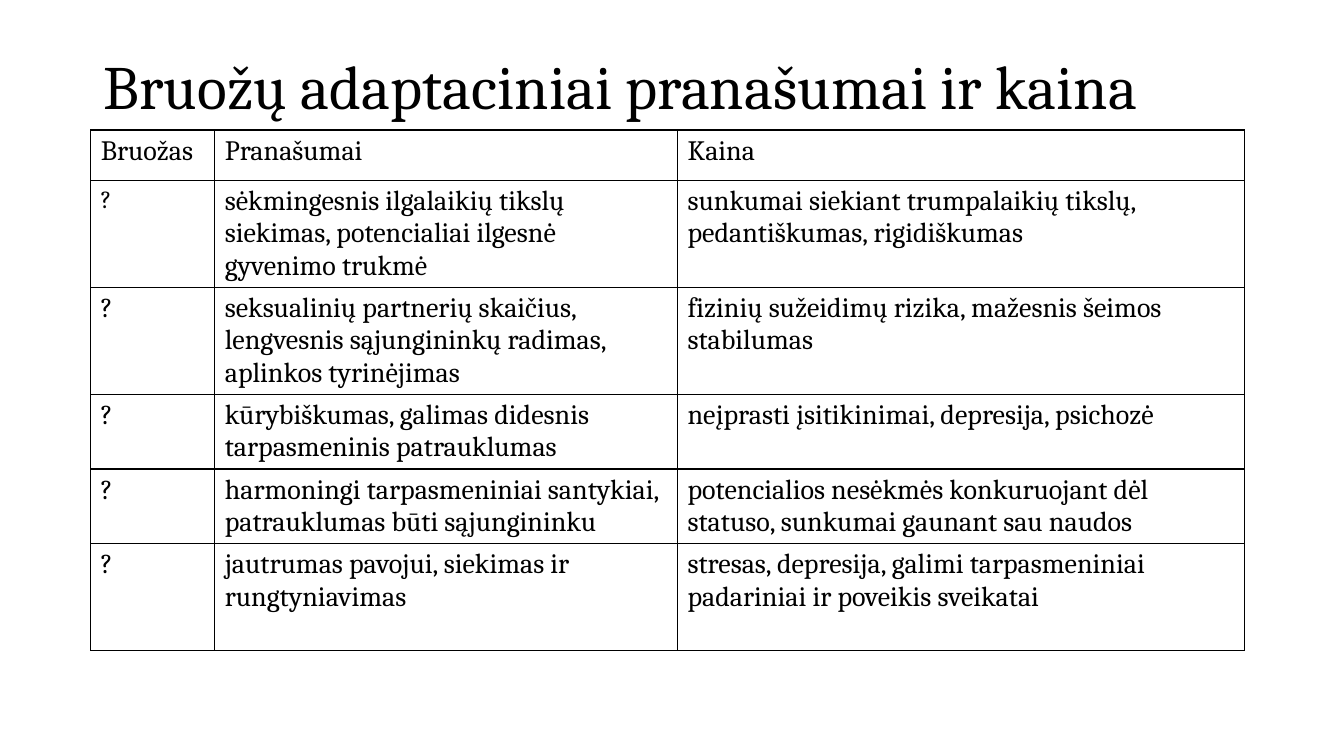
import pptx
import pptx.util
import pptx.dml.color
import pptx.enum.text
import pptx.oxml.ns
from lxml import etree

Inches, Pt = pptx.util.Inches, pptx.util.Pt
qn = pptx.oxml.ns.qn

# Content
TITLE = "Bruožų adaptaciniai pranašumai ir kaina"
HEADER = ("Bruožas", "Pranašumai", "Kaina")
TRAITS = [
    ("sėkmingesnis ilgalaikių tikslų siekimas, potencialiai ilgesnė gyvenimo trukmė",
     "sunkumai siekiant trumpalaikių tikslų, pedantiškumas, rigidiškumas"),
    ("seksualinių partnerių skaičius, lengvesnis sąjungininkų radimas, aplinkos tyrinėjimas",
     "fizinių sužeidimų rizika, mažesnis šeimos stabilumas"),
    ("kūrybiškumas, galimas didesnis tarpasmeninis patrauklumas",
     "neįprasti įsitikinimai, depresija, psichozė"),
    ("harmoningi tarpasmeniniai santykiai, patrauklumas būti sąjungininku",
     "potencialios nesėkmės konkuruojant dėl statuso, sunkumai gaunant sau naudos"),
    ("jautrumas pavojui, siekimas ir rungtyniavimas",
     "stresas, depresija, galimi tarpasmeniniai padariniai ir poveikis sveikatai"),
]
ROWS = [HEADER] + [("?",) + trait for trait in TRAITS]
COL_WIDTHS = (1.23, 4.59, 5.62)
ROW_HEIGHTS = (0.5, 1.06, 1.06, 0.74, 0.74, 1.06)
COLORS = {"text": "000000", "border": "000000"}
FONT = "Cambria"


def style_paragraph(p, size):
    p.font.name = FONT
    p.font.size = Pt(size)
    p.font.bold = False
    p.font.color.rgb = pptx.dml.color.RGBColor.from_string(COLORS["text"])


def add_borders(cell):
    tcPr = cell._tc.get_or_add_tcPr()
    for i, side in enumerate(("a:lnL", "a:lnR", "a:lnT", "a:lnB")):
        ln = etree.Element(qn(side), w=str(Pt(1)))
        fill = etree.SubElement(ln, qn("a:solidFill"))
        etree.SubElement(fill, qn("a:srgbClr"), val=COLORS["border"])
        tcPr.insert(i, ln)


prs = pptx.Presentation()
prs.slide_width, prs.slide_height = Inches(13.33), Inches(7.5)
s = prs.slides.add_slide(prs.slide_layouts[5])

# Title
title = s.shapes.title
title.left, title.top = Inches(0.93), Inches(0.16)
title.width, title.height = Inches(11.5), Inches(1.45)
tf = title.text_frame
tf.text = TITLE
tf.vertical_anchor = pptx.enum.text.MSO_ANCHOR.MIDDLE
p = tf.paragraphs[0]
p.alignment = pptx.enum.text.PP_ALIGN.LEFT
p.line_spacing = 0.9
style_paragraph(p, 44)

# Table
table = s.shapes.add_table(
    len(ROWS), len(HEADER), Inches(0.9), Inches(1.29),
    Inches(sum(COL_WIDTHS)), Inches(sum(ROW_HEIGHTS))).table
table.first_row = table.horz_banding = False
for column, width in zip(table.columns, COL_WIDTHS):
    column.width = Inches(width)
for r, (texts, height) in enumerate(zip(ROWS, ROW_HEIGHTS)):
    table.rows[r].height = Inches(height)
    for c, text in enumerate(texts):
        cell = table.cell(r, c)
        cell.text = text
        cell.fill.background()
        add_borders(cell)
        # The first question mark is slightly smaller
        style_paragraph(cell.text_frame.paragraphs[0], 18 if (r, c) == (1, 0) else 20)

prs.save("out.pptx")
